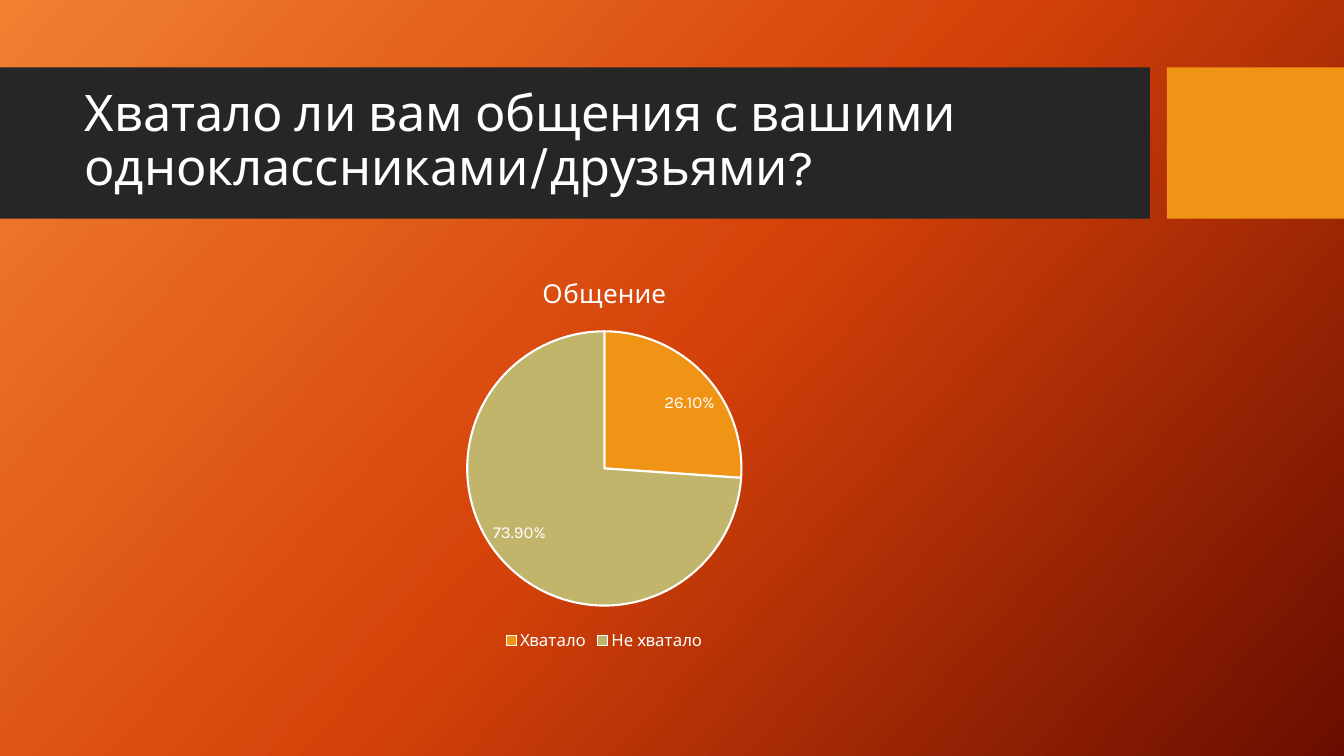
"""Build a survey slide with a title band and a pie chart."""
import pptx
import pptx.chart.data
import pptx.dml.color
import pptx.enum.chart
import pptx.enum.shapes
import pptx.enum.text
import pptx.oxml
import pptx.oxml.ns
import pptx.util

Cm = pptx.util.Cm
Pt = pptx.util.Pt
RGBColor = pptx.dml.color.RGBColor
WHITE = RGBColor(0xFF, 0xFF, 0xFF)
DARK = RGBColor(0x26, 0x26, 0x26)
AMBER = RGBColor(0xF0, 0x94, 0x15)
OLIVE = RGBColor(0xC1, 0xB5, 0x6B)
FLAME = RGBColor(0xF1, 0x80, 0x31)
RUST = RGBColor(0xD5, 0x42, 0x09)
WINE = RGBColor(0x6A, 0x0D, 0x00)


def write(frame, text, size=12, color=WHITE, face="Karla", space=None):
    para = frame.paragraphs[0]
    para.line_spacing = space
    run = para.add_run()
    run.text = text
    style(run.font, size, color, face)


def style(font, size, color=WHITE, face="Karla"):
    font.size = Pt(size)
    font.bold = False
    font.name = face
    font.color.rgb = color


class Deck:
    def __init__(self, wide, high):
        self.show = pptx.Presentation()
        self.show.slide_width = Cm(wide)
        self.show.slide_height = Cm(high)
        self.slide = self.show.slides.add_slide(self.show.slide_layouts[6])

    def shade(self, stops, angle):
        fill = self.slide.background.fill
        fill.gradient()
        fill.gradient_angle = 360 - angle
        space = pptx.oxml.ns.nsdecls("a")
        marks = "".join(
            f'<a:gs pos="{pos * 1000}"><a:srgbClr val="{color}"/></a:gs>'
            for pos, color in stops)
        new = pptx.oxml.parse_xml(f"<a:gsLst {space}>{marks}</a:gsLst>")
        old = self.slide.element.find(".//" + pptx.oxml.ns.qn("a:gsLst"))
        old.getparent().replace(old, new)

    def block(self, left, top, wide, high, color):
        kind = pptx.enum.shapes.MSO_SHAPE.RECTANGLE
        shape = self.slide.shapes.add_shape(
            kind, Cm(left), Cm(top), Cm(wide), Cm(high))
        shape.shadow.inherit = False
        shape.fill.solid()
        shape.fill.fore_color.rgb = color
        shape.line.fill.background()

    def label(self, left, top, wide, high, text, **form):
        box = self.slide.shapes.add_textbox(
            Cm(left), Cm(top), Cm(wide), Cm(high))
        frame = box.text_frame
        frame.word_wrap = True
        frame.vertical_anchor = pptx.enum.text.MSO_ANCHOR.MIDDLE
        write(frame, text, **form)

    def pie(self, left, top, wide, high, title, parts):
        data = pptx.chart.data.CategoryChartData(number_format="0.00%")
        data.categories = [name for name, _, _ in parts]
        data.add_series("Series 1", [value for _, value, _ in parts])
        enum = pptx.enum.chart
        chart = self.slide.shapes.add_chart(
            enum.XL_CHART_TYPE.PIE,
            Cm(left), Cm(top), Cm(wide), Cm(high), data).chart
        style(chart.font, 10)
        chart.has_title = True
        write(chart.chart_title.text_frame, title, size=18.6)
        chart.chart_title.include_in_layout = False
        chart.has_legend = True
        chart.legend.position = enum.XL_LEGEND_POSITION.BOTTOM
        chart.legend.include_in_layout = False
        style(chart.legend.font, 12)
        plot = chart.plots[0]
        plot.vary_by_categories = True
        series = plot.series[0]
        for spot, (_, _, color) in enumerate(parts):
            form = series.points[spot].format
            form.fill.solid()
            form.fill.fore_color.rgb = color
            form.line.color.rgb = WHITE
            form.line.width = Pt(1.5)
        tags = series.data_labels
        tags.show_value = True
        tags.number_format = "0.00%"
        tags.number_format_is_linked = False
        tags.position = enum.XL_LABEL_POSITION.BEST_FIT
        style(tags.font, 12)


def main():
    deck = Deck(33.87, 19.05)
    deck.shade([(0, FLAME), (50, RUST), (100, WINE)], 42)
    deck.block(0, 1.7, 28.98, 3.81, DARK)
    deck.block(29.41, 1.7, 4.46, 3.81, AMBER)
    deck.label(1.88, 2.08, 26.7, 3,
               "Хватало ли вам общения с вашими одноклассниками/друзьями?",
               size=36, space=0.9)
    deck.pie(1.88, 6.5, 26.7, 10, "Общение",
             [("Хватало", 0.261, AMBER), ("Не хватало", 0.739, OLIVE)])
    deck.show.save("out.pptx")


if __name__ == "__main__":
    main()
